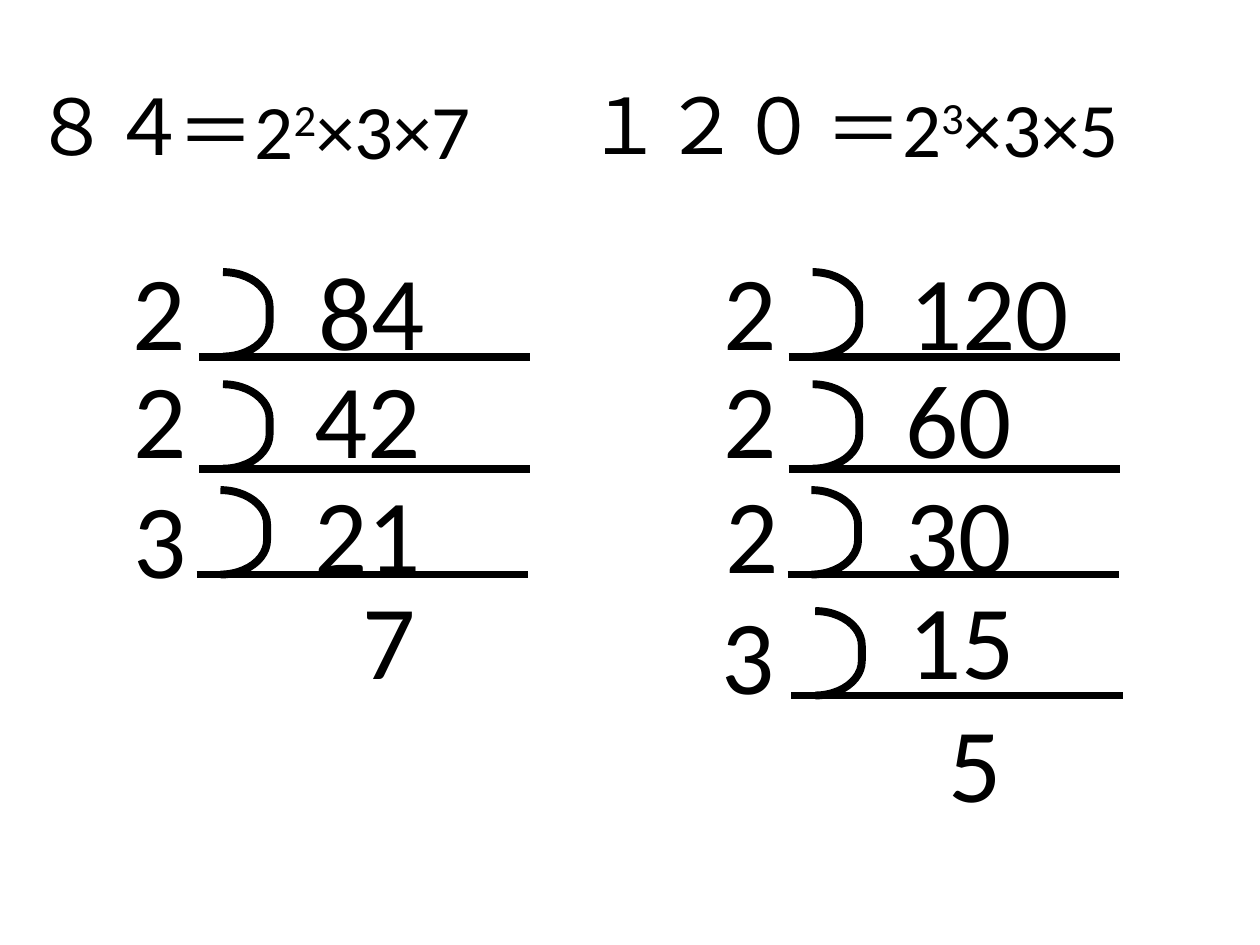
from dataclasses import dataclass

from lxml import etree
from pptx import Presentation
from pptx import util as u
from pptx.dml.color import RGBColor
from pptx.enum import shapes, text
from pptx.oxml.ns import qn


@dataclass(frozen=True)
class Theme:
    font: str = "Calibri"
    ink: RGBColor = RGBColor(0, 0, 0)
    heading: int = 44
    digit: int = 60
    stroke: float = 4.5


THEME = Theme()
DIGIT_HEIGHT = 1.11
SPACE = 0.19  # width of one digit-size space

# Each step: divisor, its left and top; dividend, its left, top and width;
# left and top of the bracket
LADDERS = [
    [("2", 0.95, 1.9, "84", 2.43, 1.9, 1.24, 1.77, 2.16),
     ("2", 0.96, 2.76, "42", 2.4, 2.76, 1.28, 1.77, 3.05),
     ("3", 0.96, 3.71, "21", 2.4, 3.67, 1.28, 1.75, 3.89)],
    [("2", 5.64, 1.9, "120", 7.12, 1.9, 1.58, 6.45, 2.16),
     ("2", 5.64, 2.76, "60", 7.09, 2.76, 1.28, 6.45, 3.05),
     ("2", 5.66, 3.67, "30", 7.09, 3.67, 1.28, 6.44, 3.89),
     ("3", 5.63, 4.63, " 15", 6.92, 4.51, 1.28, 6.47, 4.85)],
]


def add_text(slide, box, parts, size, align=text.PP_ALIGN.LEFT, indent=0, **frame_format):
    """Text box; parts are (words, raised) pairs."""
    frame = slide.shapes.add_textbox(*map(u.Inches, box)).text_frame
    settings = {"word_wrap": True, "margin_left": u.Inches(0.1 + indent), **frame_format}
    for name, value in settings.items():
        setattr(frame, name, value)
    line = frame.paragraphs[0]
    line.alignment = align
    for words, raised in parts:
        run = line.add_run()
        run.text = words
        for name, value in {"name": THEME.font, "size": u.Pt(size)}.items():
            setattr(run.font, name, value)
        run.font.color.rgb = THEME.ink
        if raised:
            run.font._element.set("baseline", "30000")


def add_number(slide, digits, left, top, width=0.62, indent=0):
    add_text(slide, (left, top, width, DIGIT_HEIGHT), [(digits, False)], THEME.digit,
             indent=indent, auto_size=text.MSO_AUTO_SIZE.SHAPE_TO_FIT_TEXT)


def add_heading(slide, number, box):
    add_text(slide, box, [(number, False)], THEME.heading, text.PP_ALIGN.CENTER,
             vertical_anchor=text.MSO_ANCHOR.MIDDLE)


def add_factors(slide, left, top, exponent, last_factor):
    parts = [("＝2", False), (exponent, True), (f"×3×{last_factor}", False)]
    add_text(slide, (left, top, 3.2, 0.84), parts, THEME.heading, word_wrap=False,
             auto_size=text.MSO_AUTO_SIZE.SHAPE_TO_FIT_TEXT)


def style_stroke(stroke):
    stroke.color.rgb = THEME.ink
    stroke.width = u.Pt(THEME.stroke)


def add_division_sign(slide, left, top):
    """Bracket standing on a rule, as one group."""
    sign = slide.shapes.add_group_shape()
    bracket = sign.shapes.add_shape(shapes.MSO_SHAPE.RIGHT_BRACKET,
                                    *map(u.Inches, (left, top, 0.37, 0.67)))
    bracket.adjustments[0] = 0.741
    bracket.shadow.inherit = False
    bracket.fill.background()
    style_stroke(bracket.line)

    base = top + 0.67
    rule = sign.shapes.add_connector(shapes.MSO_CONNECTOR.STRAIGHT,
                                     *map(u.Inches, (left - 0.19, base, left + 2.44, base)))
    style_stroke(rule.line)
    etree.SubElement(rule._element.spPr, qn("a:effectLst"))


def add_ladder(slide, steps):
    for divisor, div_left, div_top, dividend, left, top, width, sign_left, sign_top in steps:
        add_division_sign(slide, sign_left, sign_top)
        add_number(slide, dividend, left, top, width)
        add_number(slide, divisor, div_left, div_top)


def main():
    deck = Presentation()
    deck.slide_width, deck.slide_height = u.Inches(10), u.Inches(7.5)
    slide = deck.slides.add_slide(deck.slide_layouts[6])

    # Factorisations
    add_heading(slide, "８４", (0.01, 0.52, 1.74, 0.94))
    add_heading(slide, "１２０", (4.51, 0.51, 2.13, 0.94))
    add_factors(slide, 1.31, 0.61, "2", "7")
    add_factors(slide, 6.45, 0.59, "3", "5")

    # Repeated division
    for steps in LADDERS:
        add_ladder(slide, steps)

    # Last quotients
    add_number(slide, "7", 2.4, 4.51, 1.28, indent=2 * SPACE)
    add_number(slide, "5", 7.43, 5.49)

    deck.save("out.pptx")


if __name__ == "__main__":
    main()
